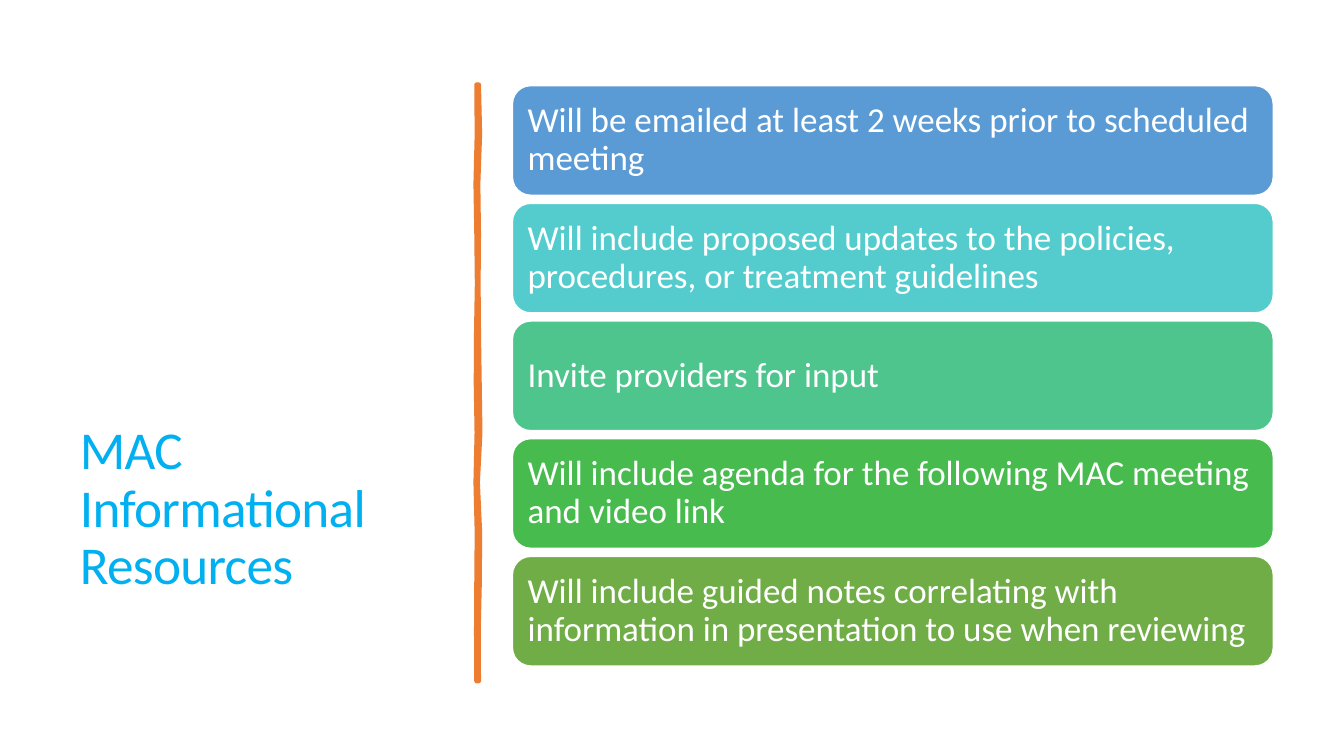
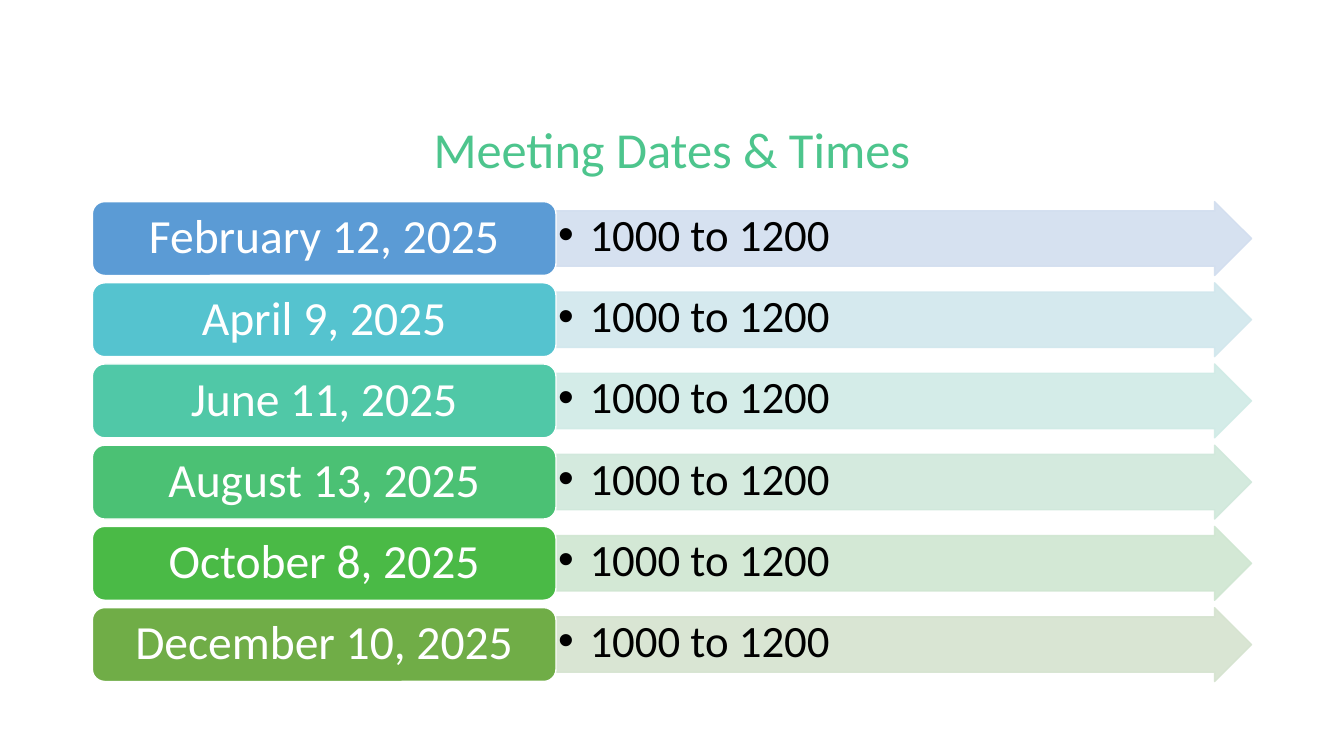
from dataclasses import dataclass

from lxml import etree
from pptx import Presentation
from pptx.dml.color import RGBColor
from pptx.enum import shapes, text
from pptx.oxml import ns
from pptx.util import Pt


@dataclass(frozen=True)
class Theme:
    font: str = "Calibri"
    white: str = "FFFFFF"
    black: str = "000000"
    blue: str = "00B0F0"
    green: str = "4DC58D"
    orange: str = "ED7D31"
    side_title_size: float = 38
    top_title_size: float = 36
    card_size: float = 25
    date_size: float = 34
    time_size: float = 32
    line_spacing: float = 0.9


THEME = Theme()

RESOURCES = [
    ("Will be emailed at least 2 weeks prior to scheduled meeting", "5B9BD5"),
    ("Will include proposed updates to the policies, procedures, or treatment guidelines", "54CCCD"),
    ("Invite providers for input", THEME.green),
    ("Will include agenda for the following MAC meeting and video link", "48BB4F"),
    ("Will include guided notes correlating with information in presentation to use when reviewing", "70AD47"),
]

MEETINGS = [
    ("February 12, 2025", "5B9BD5", "D2DEEF"),
    ("April 9, 2025", "55C3CF", "D1E7ED"),
    ("June 11, 2025", "50C8A7", "D0EBE6"),
    ("August 13, 2025", "4BC174", "D0E8DB"),
    ("October 8, 2025", "4ABA46", "CFE6D1"),
    ("December 10, 2025", "70AD47", "D5E3CF"),
]
MEETING_TIME = "1000 to 1200"

BRUSH_LEFT = [340.4, 340.7, 339.8, 340.4, 340.8, 340.2, 340.0, 340.6, 339.8, 340.7, 340.4, 340.2, 340.4]
BRUSH_RIGHT = [342, 342.8, 341.5, 342, 341.7, 342, 342.5, 343, 341.2, 342.8, 342.6, 341.8, 342]


def add_child(parent, tag, **attributes):
    return etree.SubElement(parent, ns.qn(tag), attributes)


def paint(shape, fill, line, width=1, alpha=None):
    shape.shadow.inherit = False
    shape.line.width = Pt(width)
    for target, colour in ((shape.fill, fill), (shape.line.fill, line)):
        target.solid()
        target.fore_color.rgb = RGBColor.from_string(colour)
    if alpha:
        for colour in shape._element.spPr.iter(ns.qn("a:srgbClr")):
            add_child(colour, "a:alpha", val=str(alpha * 1000))


def write(shape, content, size, colour, align, anchor, insets=(7.2, 3.6)):
    frame = shape.text_frame
    frame.text = content
    frame.word_wrap = True
    frame.vertical_anchor = anchor
    frame.margin_left = frame.margin_right = Pt(insets[0])
    frame.margin_top = frame.margin_bottom = Pt(insets[1])
    paragraph = frame.paragraphs[0]
    paragraph.alignment = align
    paragraph.line_spacing = THEME.line_spacing
    font = paragraph.runs[0].font
    font.name = THEME.font
    font.size = Pt(size)
    font.color.rgb = RGBColor.from_string(colour)
    return paragraph


def add_title(slide, content, box, size, colour, align):
    shape = slide.shapes.add_textbox(*map(Pt, box))
    return write(shape, content, size, colour, align, text.MSO_ANCHOR.BOTTOM)


def add_card(slide, content, box, fill, size, align, insets):
    shape = slide.shapes.add_shape(shapes.MSO_SHAPE.ROUNDED_RECTANGLE, *map(Pt, box))
    paint(shape, fill, THEME.white)
    write(shape, content, size, THEME.white, align, text.MSO_ANCHOR.MIDDLE, insets)


def add_time_arrow(slide, content, box, fill):
    shape = slide.shapes.add_shape(shapes.MSO_SHAPE.RIGHT_ARROW, *map(Pt, box))
    shape.adjustments[0] = 0.75
    shape.adjustments[1] = 0.5
    paint(shape, fill, fill, alpha=90)
    paragraph = write(shape, content, THEME.time_size, THEME.black,
                      text.PP_ALIGN.LEFT, text.MSO_ANCHOR.TOP, (1.44, 1.44))
    properties = paragraph._p.get_or_add_pPr()
    properties.set("marL", str(Pt(22.5)))
    properties.set("indent", str(-Pt(22.5)))
    add_child(properties, "a:buFont", typeface="Arial")
    add_child(properties, "a:buChar", char="•")


def add_brush_line(slide, top, height):
    step = height / (len(BRUSH_LEFT) - 1)
    left = [(x * 10, (top + i * step) * 10) for i, x in enumerate(BRUSH_LEFT)]
    right = [(x * 10, (top + i * step) * 10) for i, x in enumerate(BRUSH_RIGHT)]
    builder = slide.shapes.build_freeform(*left[0], scale=Pt(0.1))
    builder.add_line_segments(right + left[:0:-1], close=True)
    shape = builder.convert_to_shape()
    paint(shape, THEME.orange, THEME.orange, 3.25)
    add_child(shape.line._get_or_add_ln(), "a:round")


def build_resources(slide):
    title = add_title(slide, "MAC Informational Resources", (50, 288.5, 269, 141),
                      THEME.side_title_size, THEME.blue, text.PP_ALIGN.LEFT)
    title.runs[0]._r.get_or_add_rPr().set("spc", "-50")
    add_brush_line(slide, 60.5, 426)
    top, pitch, height = 61.2, 84.06, 78.3
    for row, (content, fill) in enumerate(RESOURCES):
        add_card(slide, content, (366, top + row * pitch, 543.5, height), fill,
                 THEME.card_size, text.PP_ALIGN.LEFT, (7.2, 7.2))


def build_meetings(slide):
    add_title(slide, "Meeting Dates & Times", (66, 81.5, 828, 50),
              THEME.top_title_size, THEME.green, text.PP_ALIGN.CENTER)
    left, top, pitch, height = 66, 144, 58, 52.75
    date_width, arrow_width = 331.2, 496.8
    for row, (date, fill, tint) in enumerate(MEETINGS):
        y = top + row * pitch
        add_time_arrow(slide, MEETING_TIME, (left + date_width, y, arrow_width, height), tint)
        add_card(slide, date, (left, y, date_width, height), fill,
                 THEME.date_size, text.PP_ALIGN.CENTER, (10, 5))


def main():
    presentation = Presentation()
    presentation.slide_width = Pt(960)
    presentation.slide_height = Pt(540)
    for build in (build_resources, build_meetings):
        build(presentation.slides.add_slide(presentation.slide_layouts[6]))
    presentation.save("out.pptx")


if __name__ == "__main__":
    main()
